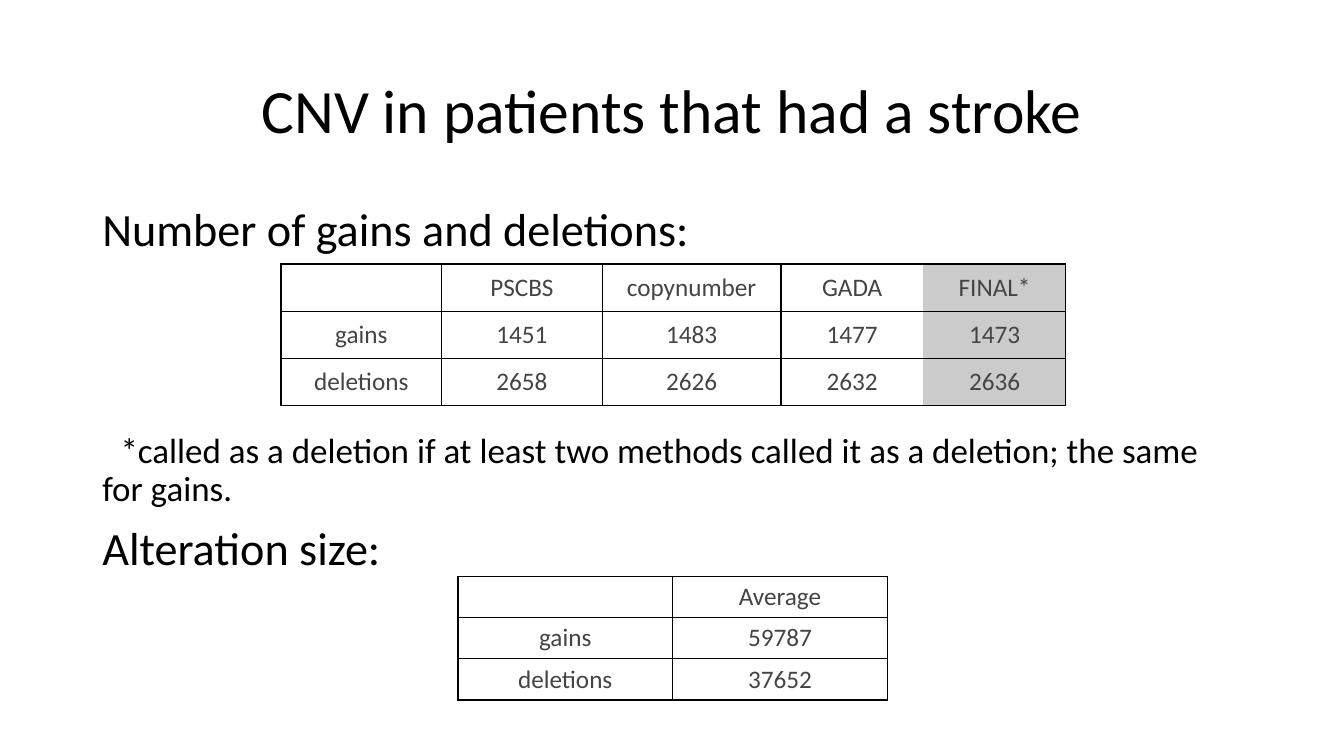
"""Build a slide on copy number variation in stroke patients."""
from dataclasses import dataclass

from lxml.etree import SubElement
from pptx import Presentation
from pptx.dml.color import RGBColor
from pptx.enum.text import MSO_ANCHOR, PP_ALIGN
from pptx.oxml.ns import qn
from pptx.util import Cm, Pt


@dataclass(frozen=True)
class Theme:
    font: str = "Calibri"
    text: str = "000000"
    table_text: str = "444444"
    border: str = "000000"
    highlight: str = "CBCBCB"
    title_size: int = 44
    heading_size: int = 33
    note_size: int = 25
    table_size: int = 18
    border_width: int = 1


THEME = Theme()
SLIDE_SIZE = (33.87, 19.05)
TEXT_WIDTH = 29.21
TEXT_LEFT = (SLIDE_SIZE[0] - TEXT_WIDTH) / 2
CELL_MARGIN = 0.1
NOTE_INDENT = 0.46

TITLE = "CNV in patients that had a stroke"
NOTE = ("*called as a deletion if at least two methods called it as a deletion; "
        "the same for gains.")
TEXTS = [
    {"text": TITLE, "top": 1.02, "height": 3.68, "size": THEME.title_size,
     "align": PP_ALIGN.CENTER, "anchor": MSO_ANCHOR.MIDDLE},
    {"text": "Number of gains and deletions:", "top": 5.08, "height": 1.5,
     "size": THEME.heading_size},
    {"text": NOTE, "top": 10.8, "height": 2.2, "size": THEME.note_size,
     "indent": NOTE_INDENT},
    {"text": "Alteration size:", "top": 13.13, "height": 1.5,
     "size": THEME.heading_size},
]
TABLES = [
    {"left": 11.54, "top": 14.52, "widths": [5.41, 5.41], "row_height": 1.04,
     "rows": [["", "Average"],
              ["gains", "59787"],
              ["deletions", "37652"]]},
    {"left": 7.08, "top": 6.65, "widths": [4.05, 4.05, 4.5, 3.59, 3.59],
     "row_height": 1.19, "highlight_column": 4,
     "rows": [["", "PSCBS", "copynumber", "GADA", "FINAL*"],
              ["gains", "1451", "1483", "1477", "1473"],
              ["deletions", "2658", "2626", "2632", "2636"]]},
]


def style_paragraph(paragraph, size, color, align):
    paragraph.alignment = align
    for run in paragraph.runs:
        run.font.name = THEME.font
        run.font.size = Pt(size)
        run.font.color.rgb = RGBColor.from_string(color)


def add_text(slide, text, top, height, size, align=PP_ALIGN.LEFT,
             anchor=MSO_ANCHOR.TOP, indent=0):
    shape = slide.shapes.add_textbox(Cm(TEXT_LEFT), Cm(top), Cm(TEXT_WIDTH), Cm(height))
    frame = shape.text_frame
    frame.word_wrap = True
    frame.vertical_anchor = anchor
    frame.text = text
    paragraph = frame.paragraphs[0]
    paragraph.line_spacing = 0.9
    style_paragraph(paragraph, size, THEME.text, align)
    if indent:
        paragraph._p.get_or_add_pPr().set("indent", str(Cm(indent)))


def set_borders(cell, hidden_sides):
    properties = cell._tc.get_or_add_tcPr()
    for side in ("lnL", "lnR", "lnT", "lnB"):
        line = SubElement(properties, qn(f"a:{side}"), w=str(Pt(THEME.border_width)))
        if side in hidden_sides:
            SubElement(line, qn("a:noFill"))
        else:
            fill = SubElement(line, qn("a:solidFill"))
            SubElement(fill, qn("a:srgbClr"), val=THEME.border)


def style_cell(cell, text, highlighted, hidden_sides):
    cell.text_frame.text = text
    cell.vertical_anchor = MSO_ANCHOR.MIDDLE
    cell.margin_left = cell.margin_right = Cm(CELL_MARGIN)
    cell.margin_top = cell.margin_bottom = Cm(CELL_MARGIN)
    style_paragraph(cell.text_frame.paragraphs[0], THEME.table_size,
                    THEME.table_text, PP_ALIGN.CENTER)
    set_borders(cell, hidden_sides)
    if highlighted:
        cell.fill.solid()
        cell.fill.fore_color.rgb = RGBColor.from_string(THEME.highlight)
    else:
        cell.fill.background()


def add_data_table(slide, left, top, widths, row_height, rows, highlight_column=None):
    shape = slide.shapes.add_table(len(rows), len(widths), Cm(left), Cm(top),
                                   Cm(sum(widths)), Cm(row_height * len(rows)))
    table = shape.table
    table.first_row = table.horz_banding = False
    for column, width in zip(table.columns, widths):
        column.width = Cm(width)
    for row_index, row in enumerate(rows):
        table.rows[row_index].height = Cm(row_height)
        for column_index, text in enumerate(row):
            highlighted = column_index == highlight_column
            hidden_sides = set()
            if highlighted:
                hidden_sides.add("lnL")
            elif column_index + 1 == highlight_column:
                hidden_sides.add("lnR")
            style_cell(table.cell(row_index, column_index), text,
                       highlighted, hidden_sides)


def main():
    presentation = Presentation()
    presentation.slide_width, presentation.slide_height = map(Cm, SLIDE_SIZE)
    slide = presentation.slides.add_slide(presentation.slide_layouts[6])
    for text in TEXTS:
        add_text(slide, **text)
    for table in TABLES:
        add_data_table(slide, **table)
    presentation.save("out.pptx")


if __name__ == "__main__":
    main()
